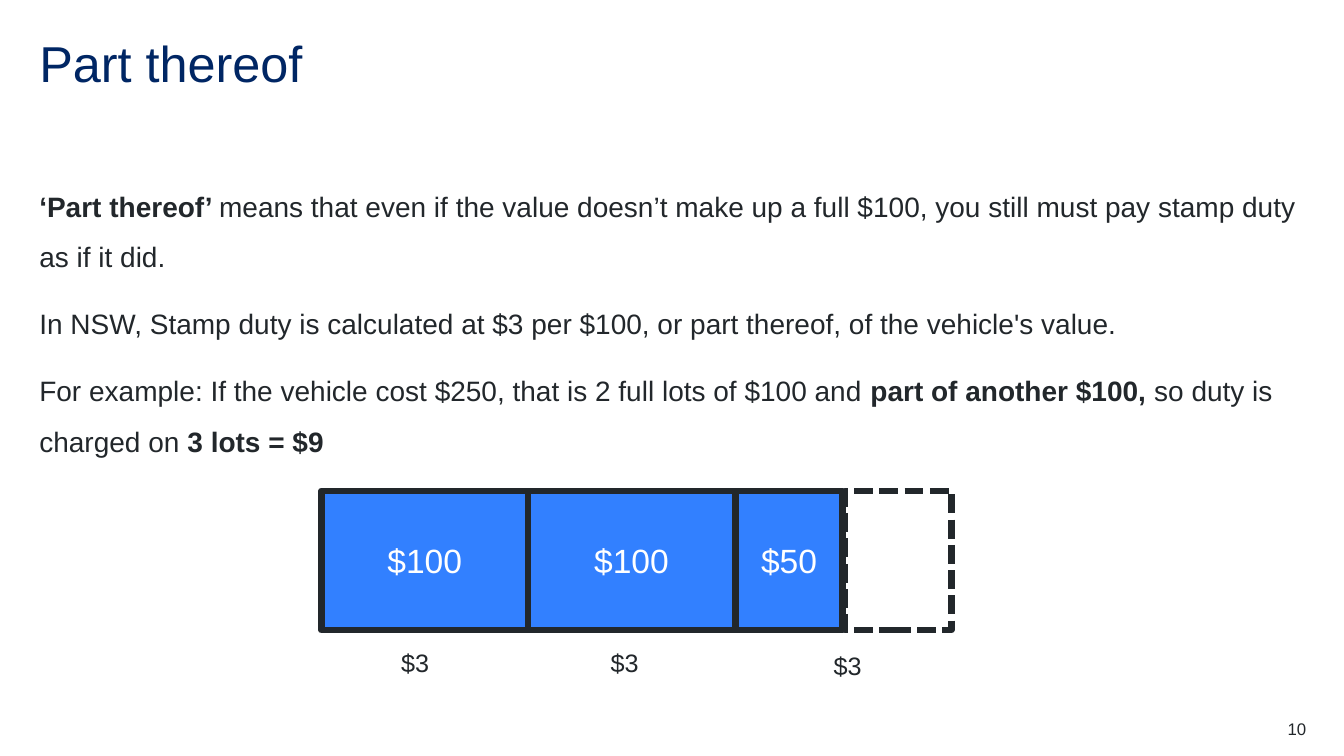
"""Build the slide that explains stamp duty on part of a lot."""
from dataclasses import dataclass

from lxml import etree
from pptx import Presentation
from pptx import util as u
from pptx.dml.color import RGBColor
from pptx.enum import dml, shapes, text
from pptx.oxml.ns import qn

FONT = "Arial"
NAVY, INK, BLUE, WHITE = "002664", "22272B", "3280FF", "FFFFFF"
MARGIN, CONTENT_WIDTH = 0.99, 31.9
LOT_TOP, LOT_HEIGHT = 12.37, 3.51


@dataclass(frozen=True)
class Lot:
    """One block of the vehicle's value, measured in centimetres."""

    left: float
    width: float
    value: str = ""


@dataclass(frozen=True)
class Label:
    """A small text box, measured in centimetres."""

    wording: str
    left: float
    top: float
    width: float = 1.78
    height: float = 1.32
    size: float = 18
    align: text.PP_ALIGN = text.PP_ALIGN.LEFT


LOTS = [
    Lot(8.1, 5.21, "$100"),
    Lot(13.31, 5.21, "$100"),
    Lot(18.54, 2.69, "$50"),
    Lot(21.29, 2.69),
]
LABELS = [
    Label("$3", 10.11, 16.31),
    Label("$3", 15.39, 16.31),
    Label("$3", 21.01, 16.38),
    Label("10", 30.91, 18.11, 2.01, 0.51, 12, text.PP_ALIGN.RIGHT),
]
EXPLANATION = [
    [("‘Part thereof’ ", True),
     ("means that even if the value doesn’t make up a full $100, you still must pay "
      "stamp duty as if it did.", False)],
    [("In NSW, Stamp duty is calculated at $3 per $100, or part thereof, "
      "of the vehicle's value.", False)],
    [("For example: If the vehicle cost $250, that is 2 full lots of $100 and ", False),
     ("part of another $100, ", True),
     ("so duty is charged on ", False),
     ("3 lots = $9", True)],
]


def colour(value: str) -> RGBColor:
    """Turn a hex string into a colour."""
    return RGBColor.from_string(value)


def place(shape, left: float, top: float, width: float, height: float) -> None:
    """Move and size a shape in centimetres."""
    shape.left, shape.top = u.Cm(left), u.Cm(top)
    shape.width, shape.height = u.Cm(width), u.Cm(height)


def prepare_frame(frame) -> None:
    """Give a text frame no margins, wrapping and a top anchor."""
    frame.margin_left = frame.margin_right = frame.margin_top = frame.margin_bottom = 0
    frame.word_wrap = True
    frame.auto_size = text.MSO_AUTO_SIZE.NONE
    frame.vertical_anchor = text.MSO_ANCHOR.TOP


def format_runs(paragraph, size: float, ink: str) -> None:
    """Set font, size and colour on every run of a paragraph."""
    for run in paragraph.runs:
        run.font.name, run.font.size = FONT, u.Pt(size)
        run.font.color.rgb = colour(ink)


def fill_title(title) -> None:
    """Write the slide title."""
    place(title, MARGIN, 0.99, CONTENT_WIDTH, 1.52)
    prepare_frame(title.text_frame)
    title.text_frame.text = "Part thereof"
    paragraph = title.text_frame.paragraphs[0]
    paragraph.alignment = text.PP_ALIGN.LEFT
    paragraph.line_spacing = 0.9
    format_runs(paragraph, 36, NAVY)


def fill_body(body) -> None:
    """Write the explanation without bullets."""
    place(body, MARGIN, 4.34, CONTENT_WIDTH, 13.36)
    frame = body.text_frame
    prepare_frame(frame)
    for index, parts in enumerate(EXPLANATION):
        paragraph = frame.add_paragraph() if index else frame.paragraphs[0]
        properties = paragraph._p.get_or_add_pPr()
        properties.set("marL", "0")
        properties.set("indent", "0")
        etree.SubElement(properties, qn("a:buNone"))
        paragraph.line_spacing = 1.5
        paragraph.space_before, paragraph.space_after = u.Pt(0), u.Pt(12)
        for wording, bold in parts:
            run = paragraph.add_run()
            run.text, run.font.bold = wording, bold
        format_runs(paragraph, 20, INK)


def add_lot(slide, lot: Lot) -> None:
    """Draw a lot: filled when it has a value, dashed when it is missing."""
    shape = slide.shapes.add_shape(
        shapes.MSO_SHAPE.RECTANGLE,
        u.Cm(lot.left), u.Cm(LOT_TOP), u.Cm(lot.width), u.Cm(LOT_HEIGHT))
    shape.shadow.inherit = False
    shape.line.color.rgb, shape.line.width = colour(INK), u.Pt(4.5)
    if not lot.value:
        shape.fill.background()
        shape.line.dash_style = dml.MSO_LINE.SQUARE_DOT
        return
    shape.fill.solid()
    shape.fill.fore_color.rgb = colour(BLUE)
    frame = shape.text_frame
    frame.text, frame.vertical_anchor = lot.value, text.MSO_ANCHOR.MIDDLE
    frame.paragraphs[0].alignment = text.PP_ALIGN.CENTER
    format_runs(frame.paragraphs[0], 24, WHITE)


def add_label(slide, label: Label) -> None:
    """Add a small text box."""
    box = slide.shapes.add_textbox(
        u.Cm(label.left), u.Cm(label.top), u.Cm(label.width), u.Cm(label.height))
    prepare_frame(box.text_frame)
    box.text_frame.text = label.wording
    paragraph = box.text_frame.paragraphs[0]
    paragraph.alignment = label.align
    format_runs(paragraph, label.size, INK)


def main() -> None:
    """Build and save the presentation."""
    presentation = Presentation()
    presentation.slide_width, presentation.slide_height = u.Cm(33.87), u.Cm(19.05)
    slide = presentation.slides.add_slide(presentation.slide_layouts[1])
    fill_title(slide.shapes.title)
    fill_body(slide.placeholders[1])
    for lot in LOTS:
        add_lot(slide, lot)
    for label in LABELS:
        add_label(slide, label)
    presentation.save("out.pptx")


if __name__ == "__main__":
    main()
